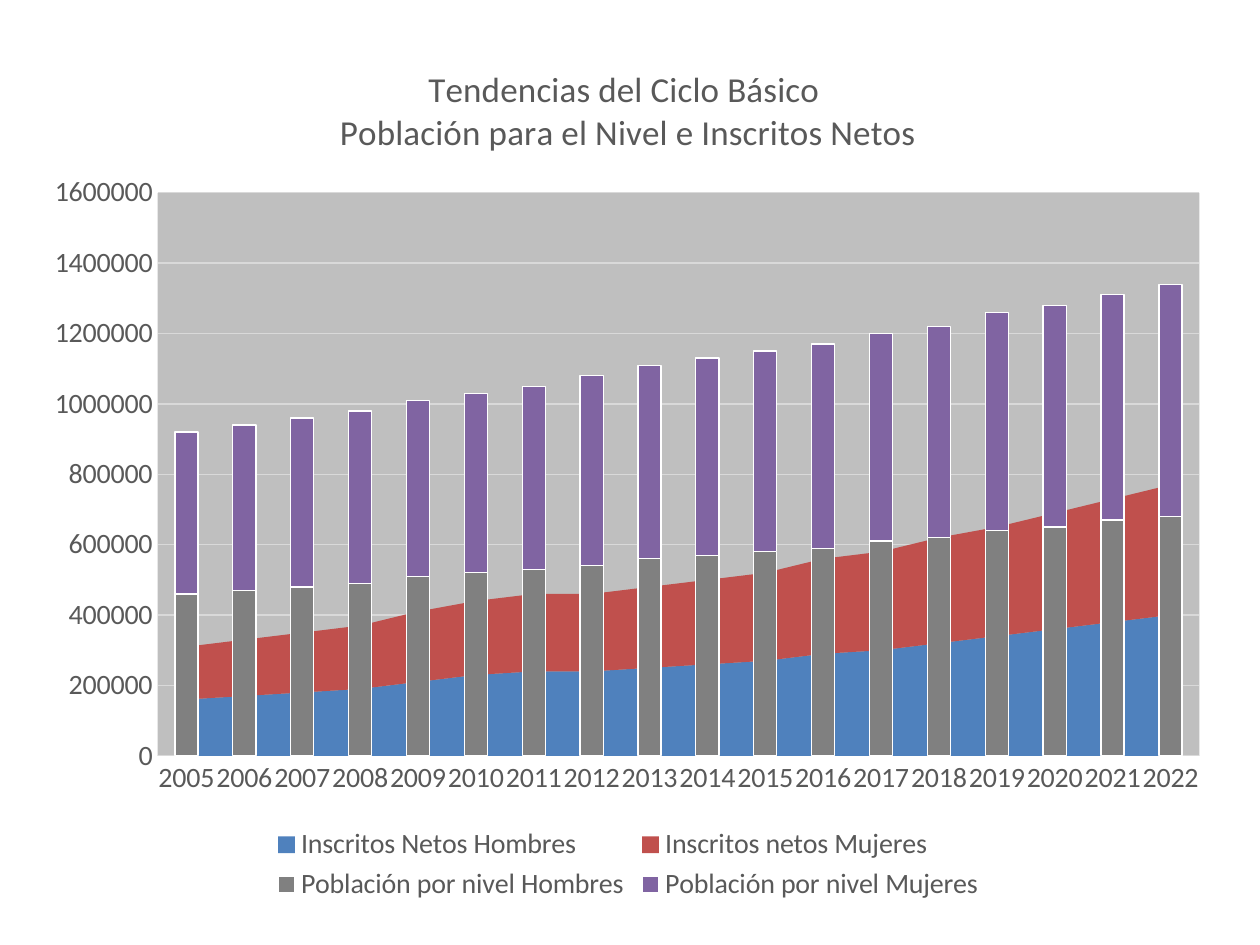
from lxml.etree import SubElement
from pptx import Presentation
from pptx.chart.data import CategoryChartData
from pptx.dml.color import RGBColor
from pptx.enum.chart import XL_CHART_TYPE as ChartType
from pptx.enum.chart import XL_LEGEND_POSITION as LegendPosition
from pptx.enum.chart import XL_TICK_MARK as TickMark
from pptx.oxml import parse_xml
from pptx.oxml.ns import nsdecls, qn
from pptx.util import Inches, Pt

FONT = "Calibri"
TEXT_GREY = RGBColor(0x59, 0x59, 0x59)
GRID_GREY = RGBColor(0xD9, 0xD9, 0xD9)
PLOT_GREY = RGBColor(0xBF, 0xBF, 0xBF)
BLUE = RGBColor(0x4F, 0x81, 0xBD)
RED = RGBColor(0xC0, 0x50, 0x4D)
GREY = RGBColor(0x80, 0x80, 0x80)
PURPLE = RGBColor(0x80, 0x64, 0xA2)
WHITE = RGBColor(0xFF, 0xFF, 0xFF)

# Name, colour and values in thousands: two areas, then two columns
SERIES = [
    ("Inscritos Netos Hombres", BLUE,
     [160, 170, 180, 190, 210, 230, 240, 240, 250,
      260, 270, 290, 300, 320, 340, 360, 380, 400]),
    ("Inscritos netos Mujeres", RED,
     [150, 160, 170, 180, 200, 210, 220, 220, 230,
      240, 250, 270, 280, 300, 310, 330, 350, 370]),
    ("Población por nivel Hombres", GREY,
     [460, 470, 480, 490, 510, 520, 530, 540, 560,
      570, 580, 590, 610, 620, 640, 650, 670, 680]),
    ("Población por nivel Mujeres", PURPLE,
     [460, 470, 480, 490, 500, 510, 520, 540, 550,
      560, 570, 580, 590, 600, 620, 630, 640, 660]),
]
AREA_COUNT = 2
CHART_BOX = (0.25, 0.3, 9.47, 6.9)
PLOT_BOX = (1.25, 1.53, 8.27, 4.47)


def style_font(font, size=16, color=TEXT_GREY):
    font.name = FONT
    font.size = Pt(size)
    font.bold = False
    font.color.rgb = color


def write_line(para, text, **style):
    span = para.add_run()
    span.text = text
    style_font(span.font, **style)


deck = Presentation()
deck.slide_width, deck.slide_height = Inches(10), Inches(7.5)
page = deck.slides.add_slide(deck.slide_layouts[6])

# Chart with all four series
data = CategoryChartData(number_format="General")
data.categories = [str(year) for year in range(2005, 2023)]
for name, color, thousands in SERIES:
    data.add_series(name, [value * 1000 for value in thousands])
chart = page.shapes.add_chart(
    ChartType.AREA_STACKED, *[Inches(length) for length in CHART_BOX], data).chart
style_font(chart.font)

# Title
chart.has_title = True
title = chart.chart_title.text_frame
write_line(title.paragraphs[0], "Tendencias del Ciclo Básico ", size=20)
write_line(title.add_paragraph(), "Población para el Nivel e Inscritos Netos", size=20)
chart.chart_title.include_in_layout = False

# Legend
chart.has_legend = True
chart.legend.position = LegendPosition.BOTTOM
chart.legend.include_in_layout = False
style_font(chart.legend.font)

# Axes
years, people = chart.category_axis, chart.value_axis
for axis in (years, people):
    axis.major_tick_mark = axis.minor_tick_mark = TickMark.NONE
    style_font(axis.tick_labels.font)
years.has_major_gridlines = False
years.format.line.color.rgb = GRID_GREY
years.format.line.width = Pt(0.75)
people.format.line.fill.background()
people.minimum_scale, people.maximum_scale = 0, 1600000
people.major_unit = 200000
people.has_major_gridlines = True
people.major_gridlines.format.line.color.rgb = GRID_GREY
people.major_gridlines.format.line.width = Pt(0.75)
people._element.find(qn("c:crossBetween")).set("val", "between")

# Series colours
area_plot = chart.plots[0]
area_plot.vary_by_categories = False
all_series = list(area_plot.series)
for series, (name, color, thousands) in zip(all_series, SERIES):
    series.format.fill.solid()
    series.format.fill.fore_color.rgb = color
for series in all_series[AREA_COUNT:]:
    series.format.line.color.rgb = WHITE
    series.format.line.width = Pt(0.75)

# Population series become stacked columns on the same axes
area_xml = all_series[0]._element.getparent()
bar_xml = parse_xml(
    f'<c:barChart {nsdecls("c")}><c:barDir val="col"/>'
    '<c:grouping val="stacked"/><c:varyColors val="0"/></c:barChart>')
for series in all_series[AREA_COUNT:]:
    bar_xml.append(series._element)
for tag, value in (("gapWidth", "150"), ("overlap", "100")):
    SubElement(bar_xml, qn(f"c:{tag}")).set("val", value)
for axis_id in area_xml.findall(qn("c:axId")):
    SubElement(bar_xml, qn("c:axId")).set("val", axis_id.get("val"))
area_xml.addnext(bar_xml)

# Plot area position and fill
plot_area = area_xml.getparent()
for old_layout in plot_area.findall(qn("c:layout")):
    plot_area.remove(old_layout)
left, top, width, height = CHART_BOX
plot_left, plot_top, plot_width, plot_height = PLOT_BOX
layout = SubElement(plot_area, qn("c:layout"))
plot_area.insert(0, layout)
manual = SubElement(layout, qn("c:manualLayout"))
for tag, value in (
    ("layoutTarget", "inner"), ("xMode", "edge"), ("yMode", "edge"),
    ("x", (plot_left - left) / width), ("y", (plot_top - top) / height),
    ("w", plot_width / width), ("h", plot_height / height),
):
    SubElement(manual, qn(f"c:{tag}")).set("val", str(value))
plot_area.append(parse_xml(
    f'<c:spPr {nsdecls("c", "a")}><a:solidFill><a:srgbClr val="{PLOT_GREY}"/>'
    '</a:solidFill></c:spPr>'))

deck.save("out.pptx")
